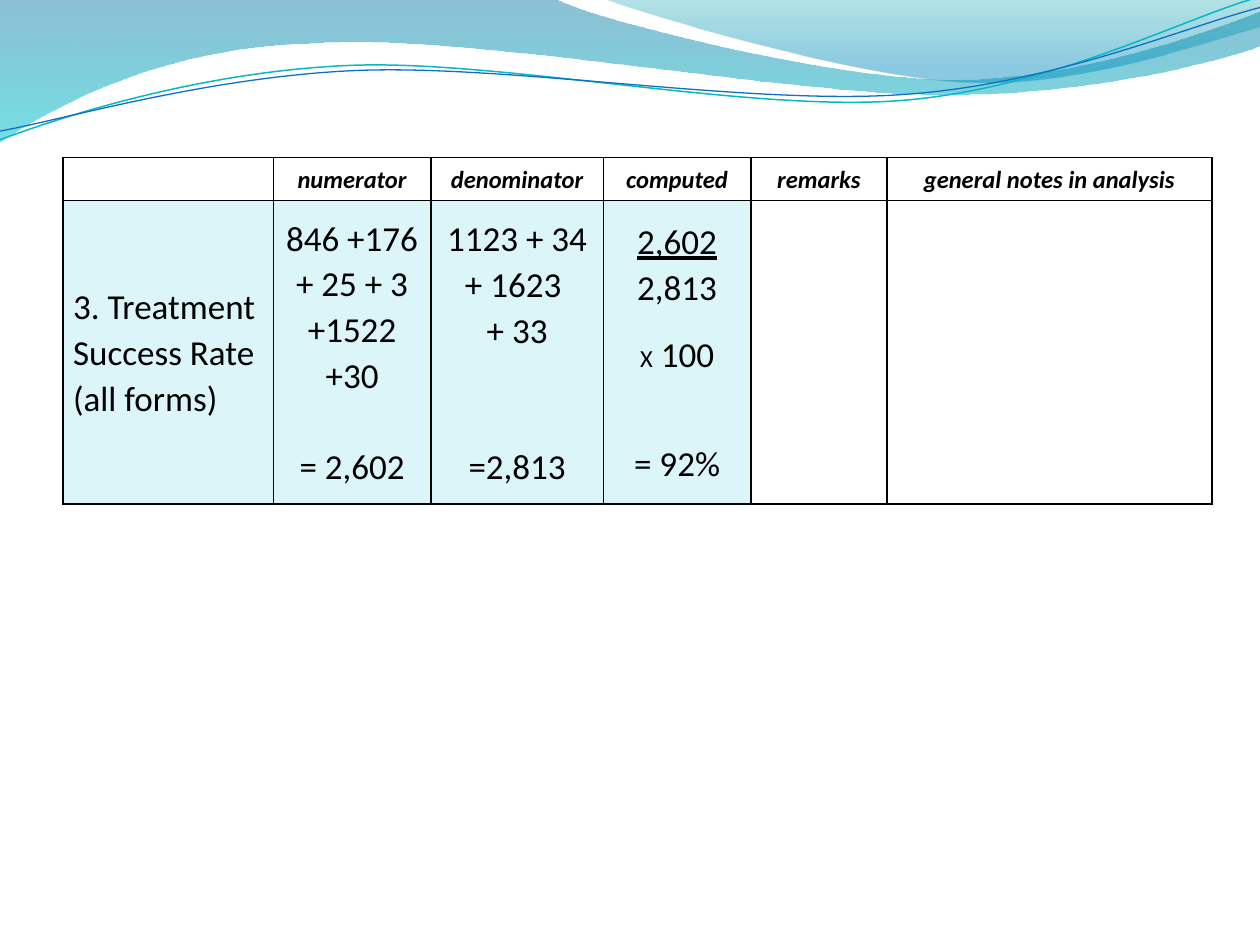
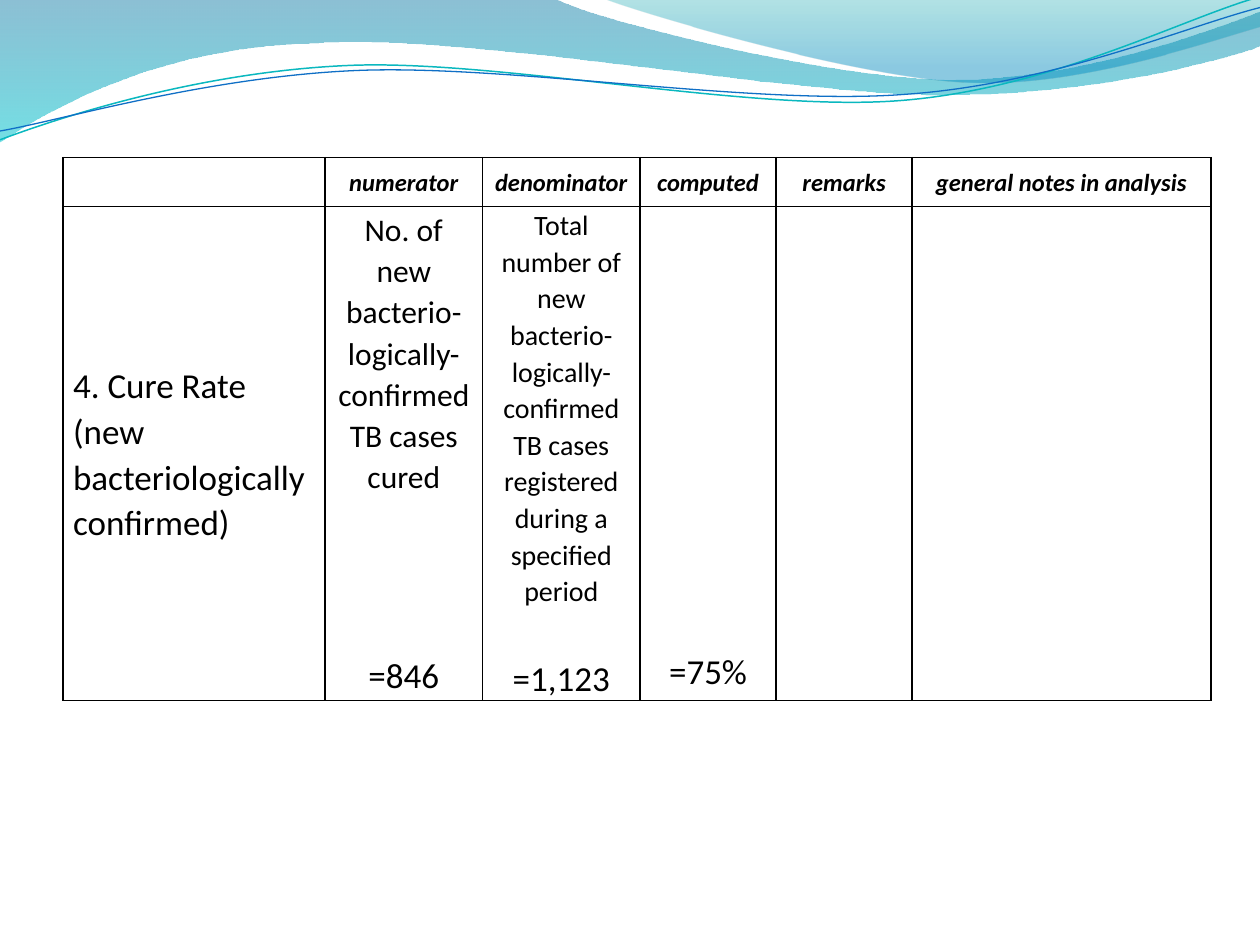
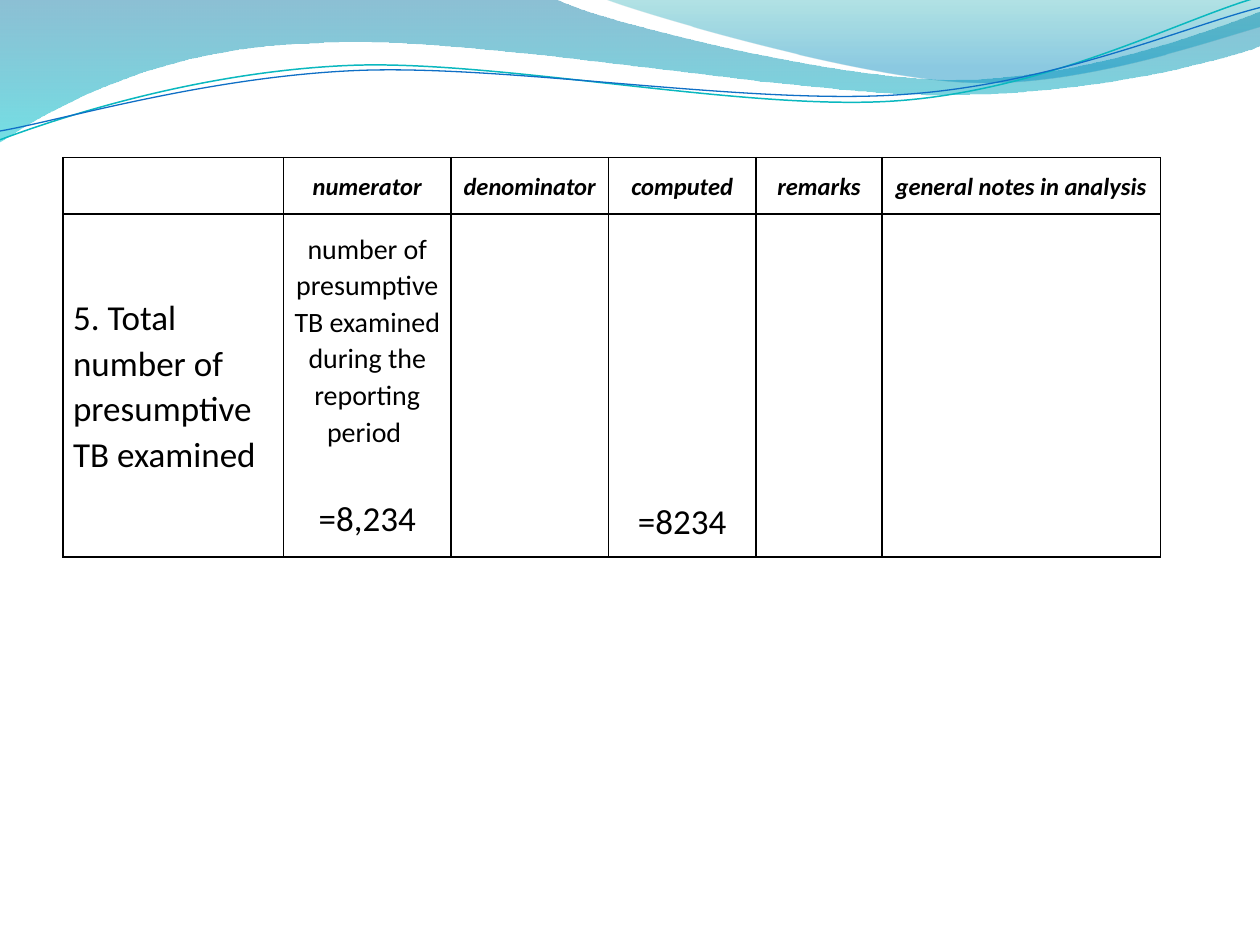
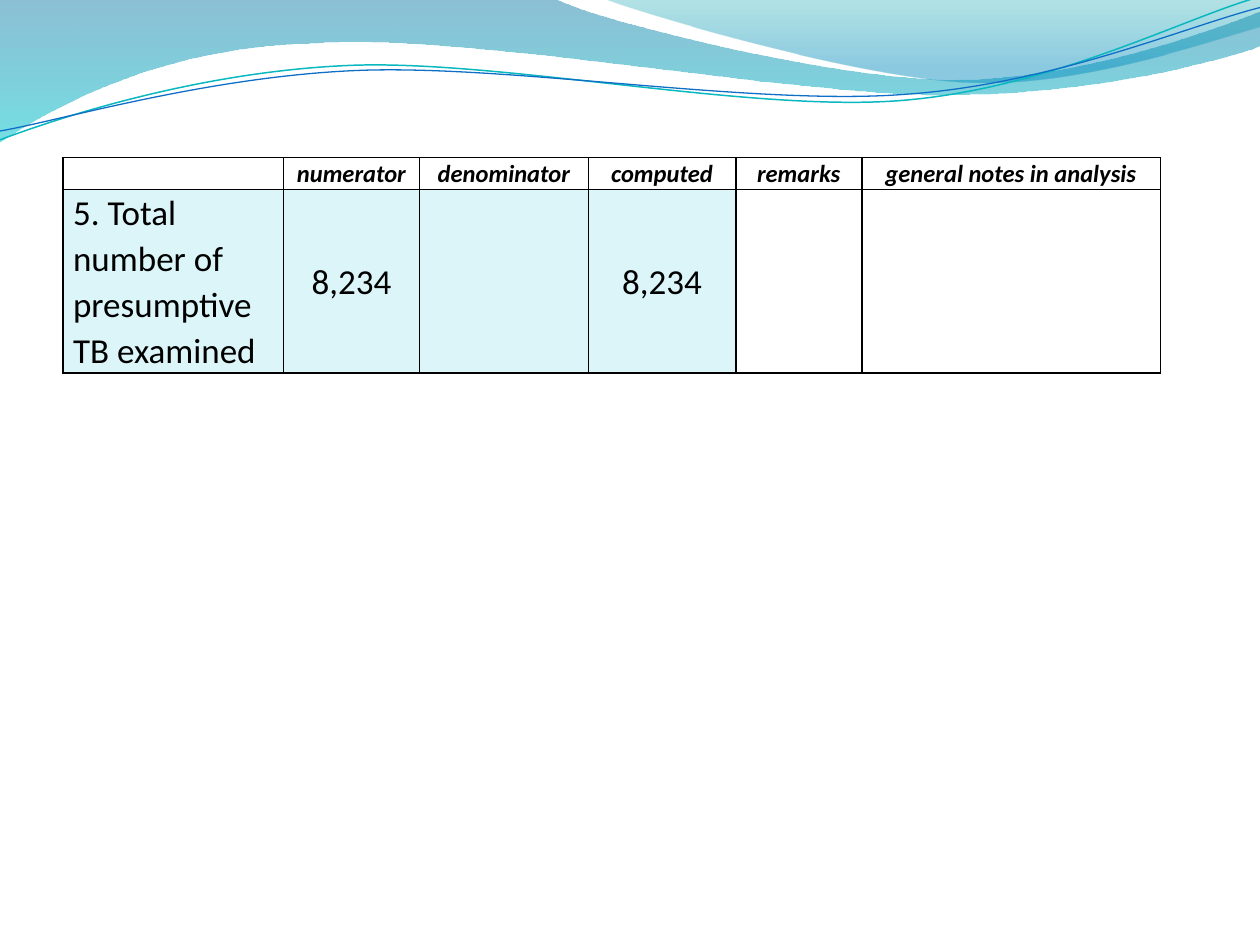
from dataclasses import dataclass

from lxml.etree import SubElement
from pptx import Presentation
from pptx.dml.color import RGBColor
from pptx.enum.text import MSO_ANCHOR as Anchor, PP_ALIGN as Align
from pptx.oxml.ns import qn
from pptx.util import Inches, Pt

COLORS = {
    "text": "000000", "border": "000000", "highlight": "DBF5F9",
    "deep_blue": "0074A1", "cyan": "00C6CF", "teal": "00A1A9", "sky": "008BBF",
    "teal_line": "0AB8BF", "blue_line": "0F6FC6",
}
FONT = "Calibri"
LINE_SPACING = 1.07
CELL_INSET = 0.08
TABLE_LEFT, TABLE_TOP = 0.5, 1.25
HEADINGS = ["", "numerator", "denominator", "computed", "remarks",
            "general notes in analysis"]

# Each wave starts at a point; a 2-tuple is a straight step and a 6-tuple
# is a cubic curve (two control points and an end point), in inches.
BANDS = [
    ([(0, 0), (4.4, -0.01), (4.76, 0.17, 6.64, 0.63, 7.58, 0.63),
      (8.53, 0.63, 9.58, 0.26, 10, 0.09), (10.01, 0.36),
      (9.83, 0.44, 8.7, 0.76, 7.46, 0.75), (6.22, 0.75, 3.82, 0.28, 2.57, 0.34),
      (1.29, 0.36, 0.46, 0.83, -0.01, 1.13)],
     [(0, "deep_blue", 45), (1, "cyan", 55)]),
    ([(4.79, -0.01), (5.09, 0.11, 6.82, 0.62, 7.69, 0.65),
      (8.56, 0.69, 9.61, 0.32, 10, 0.21), (10, 0)],
     [(0, "teal", 30), (0.8, "sky", 45)]),
]
STRANDS = [
    ([(0, 1.11), (0.48, 0.93, 1.58, 0.57, 2.77, 0.52),
      (3.95, 0.47, 5.93, 0.89, 7.13, 0.8),
      (8.33, 0.71, 9.38, 0.15, 9.98, -0.02)], "teal_line", 0.85),
    ([(0, 1.04), (0.47, 0.96, 1.64, 0.61, 2.83, 0.56),
      (4.03, 0.51, 5.97, 0.84, 7.17, 0.75),
      (8.36, 0.67, 9.41, 0.21, 10, 0.06)], "blue_line", 0.75),
]


@dataclass
class Line:
    """One paragraph of a cell; gap is the space before it in points."""
    text: str
    size: int = 20
    gap: float = 0
    underline: bool = False
    tail: str = ""  # continues the line at 20 points


@dataclass
class Indicator:
    columns: list
    rows: list
    label: str
    numerator: list
    denominator: list
    computed: list
    highlighted: bool = False
    result_inset: float = None  # computed value sits this far above the cell bottom


INDICATORS = [
    Indicator(
        [1.67, 1.25, 1.37, 1.17, 1.08, 2.58], [0.34, 2.41],
        "3. Treatment Success Rate (all forms)",
        [Line("846 +176"), Line("+ 25 + 3"), Line("+1522"), Line("+30"),
         Line("= 2,602", gap=26)],
        [Line("1123 + 34"), Line("+ 1623 "), Line("+ 33"), Line("=2,813", gap=52)],
        [Line("2,602", underline=True), Line("2,813"),
         Line("X", 14, gap=12, tail=" 100"), Line("= 92%", gap=36.5)],
        highlighted=True),
    Indicator(
        [2.08, 1.25, 1.25, 1.08, 1.08, 2.37], [0.39, 3.92],
        "4. Cure Rate (new bacteriologically\vconfirmed)",
        [Line("No. of new bacterio-logically-confirmed TB cases cured", 18),
         Line("=846", gap=89)],
        [Line("Total number of new bacterio-logically-confirmed TB cases "
              "registered during a specified period", 16),
         Line("=1,123", gap=26)],
        [Line("=75%")], result_inset=0.05),
    Indicator(
        [1.75, 1.33, 1.25, 1.17, 1, 2.21], [0.45, 2.72],
        "5. Total number of presumptive TB examined",
        [Line("number of presumptive TB examined during the reporting period ", 16),
         Line("=8,234", gap=26)],
        [], [Line("=8234")], result_inset=0.1),
    Indicator(
        [1.75, 1.08, 1.34, 1.17, 1, 2.37], [0.25, 1.45],
        "5. Total number of presumptive TB examined",
        [Line("8,234")], [], [Line("8,234")], highlighted=True),
]


def color(name):
    return RGBColor.from_string(COLORS[name])


# ---- Wave decoration ----
def draw_outline(slide, steps, close):
    """Lay straight segments through the end points, then bend the curved ones."""
    ends = [(Inches(step[-2]), Inches(step[-1])) for step in steps]
    builder = slide.shapes.build_freeform(*ends[0])
    builder.add_line_segments(ends[1:], close=close)
    outline = builder.convert_to_shape()
    outline.shadow.inherit = False
    segments = list(outline.element.iter(qn("a:lnTo")))
    for segment, step in zip(segments, steps[1:]):
        if len(step) == 2:
            continue
        curve = segment.makeelement(qn("a:cubicBezTo"))
        for x, y in zip(step[::2], step[1::2]):
            SubElement(curve, qn("a:pt"), x=str(Inches(x) - outline.left),
                       y=str(Inches(y) - outline.top))
        segment.getparent().replace(segment, curve)
    return outline


def draw_band(slide, steps, stops):
    band = draw_outline(slide, steps, close=True)
    band.line.fill.background()
    band.fill.gradient()
    band.fill.gradient_angle = 270
    for stop, (position, name, _) in zip(band.fill.gradient_stops, stops):
        stop.position = position
        stop.color.rgb = color(name)
    for shade, (_, _, opacity) in zip(band.element.spPr.iter(qn("a:srgbClr")), stops):
        SubElement(shade, qn("a:alpha"), val=str(opacity * 1000))
    return band


def draw_strand(slide, steps, name, width):
    strand = draw_outline(slide, steps, close=False)
    strand.fill.background()
    strand.line.color.rgb = color(name)
    strand.line.width = Pt(width)
    return strand


def decorate_layout(layout, slide):
    """Build the waves on a slide, then move them to the layout all slides share."""
    for placeholder in list(layout.placeholders):
        layout.shapes.element.remove(placeholder.element)
    waves = [draw_band(slide, *band) for band in BANDS]
    waves += [draw_strand(slide, *strand) for strand in STRANDS]
    for wave in waves:
        layout.shapes.element.append(wave.element)


# ---- Indicator table ----
def add_borders(cell):
    properties = cell._tc.get_or_add_tcPr()
    for side in ("lnL", "lnR", "lnT", "lnB"):
        edge = SubElement(properties, qn(f"a:{side}"), w=str(Pt(1)))
        fill = SubElement(edge, qn("a:solidFill"))
        SubElement(fill, qn("a:srgbClr"), val=COLORS["border"])


def write_cell(cell, lines, align=Align.CENTER, heading=False):
    cell.vertical_anchor = Anchor.MIDDLE
    cell.margin_left = cell.margin_right = Inches(CELL_INSET)
    cell.margin_top = cell.margin_bottom = 0
    frame = cell.text_frame
    if not lines:
        # Keep an empty cell from stretching its row
        SubElement(frame.paragraphs[0]._p, qn("a:endParaRPr"), sz="1400")
    for i, line in enumerate(lines):
        paragraph = frame.add_paragraph() if i else frame.paragraphs[0]
        paragraph.text = line.text
        paragraph.alignment = align
        paragraph.line_spacing = LINE_SPACING
        if line.gap:
            paragraph.space_before = Pt(line.gap)
        if line.tail:
            paragraph.add_run().text = line.tail
        for run, size in zip(paragraph.runs, (line.size, 20)):
            font = run.font
            font.name, font.size = FONT, Pt(size)
            font.bold = font.italic = heading
            font.underline = line.underline
            font.color.rgb = color("text")


def add_indicator_table(slide, left, top, indicator):
    table = slide.shapes.add_table(
        2, len(HEADINGS), Inches(left), Inches(top),
        Inches(sum(indicator.columns)), Inches(sum(indicator.rows))).table
    table.first_row = table.horz_banding = False
    for column, width in zip(table.columns, indicator.columns):
        column.width = Inches(width)
    for row, height in zip(table.rows, indicator.rows):
        row.height = Inches(height)

    # Borders and fills
    for cell in table.iter_cells():
        add_borders(cell)
        cell.fill.background()
    if indicator.highlighted:
        for col in range(4):
            fill = table.cell(1, col).fill
            fill.solid()
            fill.fore_color.rgb = color("highlight")

    # Heading row, then the values
    for col, heading in enumerate(HEADINGS):
        write_cell(table.cell(0, col), [Line(heading, 14)] if heading else [],
                   heading=True)
    write_cell(table.cell(1, 0), [Line(indicator.label)], Align.LEFT)
    values = [indicator.numerator, indicator.denominator, indicator.computed, [], []]
    for col, lines in enumerate(values, start=1):
        write_cell(table.cell(1, col), lines)
    if indicator.result_inset is not None:
        result = table.cell(1, 3)
        result.vertical_anchor = Anchor.BOTTOM
        result.margin_bottom = Inches(indicator.result_inset)


def main():
    prs = Presentation()
    prs.slide_width, prs.slide_height = Inches(10), Inches(7.5)
    blank = prs.slide_layouts[6]
    slides = [prs.slides.add_slide(blank) for _ in INDICATORS]
    decorate_layout(blank, slides[0])
    for slide, indicator in zip(slides, INDICATORS):
        add_indicator_table(slide, TABLE_LEFT, TABLE_TOP, indicator)
    prs.save("out.pptx")


if __name__ == "__main__":
    main()
